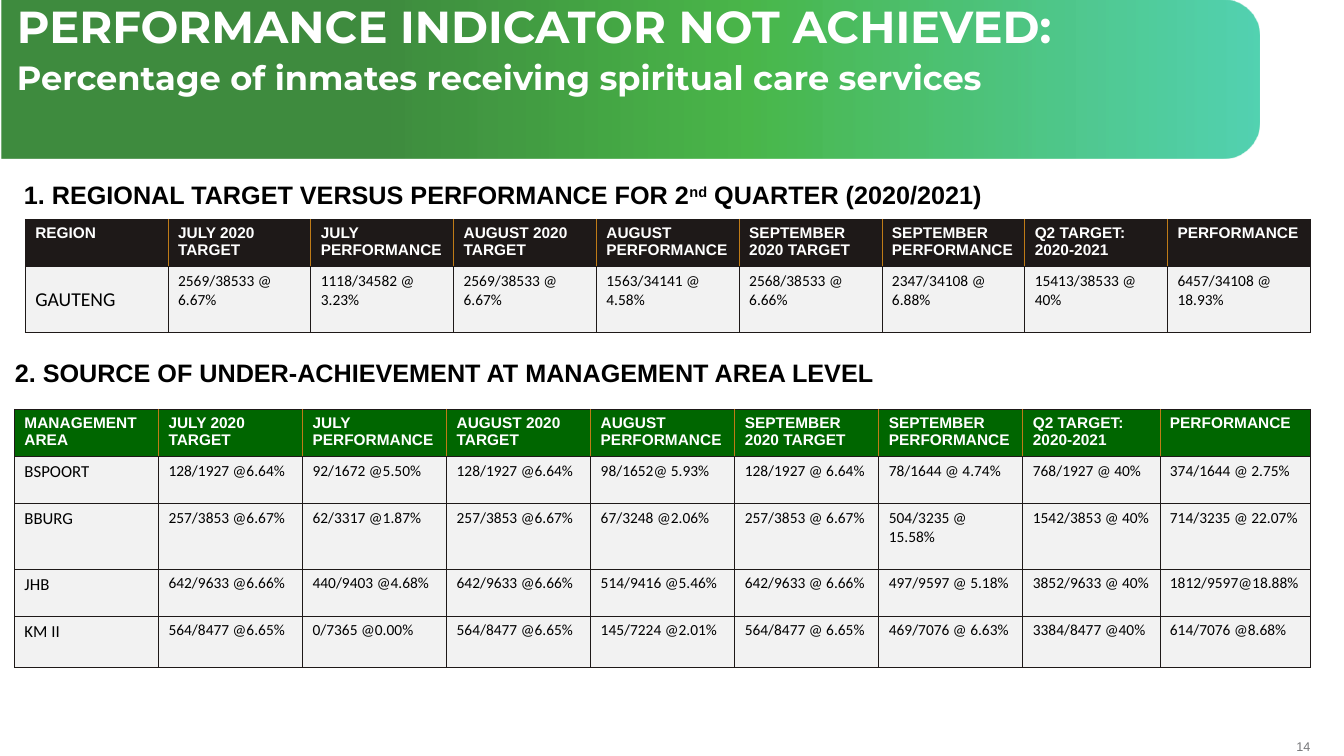
from pptx import Presentation
from pptx.dml.color import RGBColor
from pptx.enum.shapes import MSO_SHAPE
from pptx.enum.text import MSO_ANCHOR, PP_ALIGN
from pptx.oxml import parse_xml
from pptx.oxml.ns import nsdecls
from pptx.util import Pt

ROUND_TOP = MSO_SHAPE.ROUND_2_SAME_RECTANGLE
TOP, MIDDLE = MSO_ANCHOR.TOP, MSO_ANCHOR.MIDDLE
LEFT, RIGHT = PP_ALIGN.LEFT, PP_ALIGN.RIGHT

WHITE = RGBColor(0xFF, 0xFF, 0xFF)
BLACK = RGBColor(0x00, 0x00, 0x00)
GREY = RGBColor(0x77, 0x78, 0x7B)
INK = RGBColor(0x1E, 0x19, 0x18)
GREEN = RGBColor(0x00, 0x66, 0x00)
ORANGE = RGBColor(0xBF, 0x7B, 0x17)
PALE = RGBColor(0xF2, 0xF2, 0xF2)
BANNER_STOPS = [
    (30, GREEN, 75),
    (59, RGBColor(0x00, 0x99, 0x00), 71),
    (100, RGBColor(0x00, 0xBC, 0x8D), 67),
]

TITLE = "PERFORMANCE INDICATOR NOT ACHIEVED:"
SUBTITLE = "Percentage of inmates receiving spiritual care services"
REGIONAL_HEADING = [
    ("1. REGIONAL TARGET VERSUS PERFORMANCE FOR 2", False),
    ("nd", True),
    (" QUARTER (2020/2021)", False),
]
SOURCE_HEADING = [("2. SOURCE OF UNDER-ACHIEVEMENT AT MANAGEMENT AREA LEVEL", False)]
PAGE_NUMBER = "14"

PERIODS = [
    "JULY 2020\vTARGET", "JULY PERFORMANCE", "AUGUST 2020\vTARGET",
    "AUGUST PERFORMANCE", "SEPTEMBER 2020 TARGET", "SEPTEMBER PERFORMANCE",
    "Q2 TARGET: 2020-2021", "PERFORMANCE",
]
REGION_ROWS = [
    ["REGION"] + PERIODS,
    ["GAUTENG", "2569/38533 @ 6.67%", "1118/34582 @ 3.23%", "2569/38533 @\n6.67%",
     "1563/34141 @\n4.58%", "2568/38533 @\n6.66%", "2347/34108 @\n6.88%",
     "15413/38533 @\n40%", "6457/34108 @\n18.93%"],
]
AREA_ROWS = [
    ["MANAGEMENT AREA"] + PERIODS,
    ["BSPOORT", "128/1927 @6.64%", "92/1672 @5.50%", "128/1927 @6.64%", "98/1652@ 5.93%",
     "128/1927 @ 6.64%", "78/1644 @ 4.74%", "768/1927 @ 40%", "374/1644 @ 2.75%"],
    ["BBURG", "257/3853 @6.67%", "62/3317 @1.87%", "257/3853 @6.67%", "67/3248 @2.06%",
     "257/3853 @ 6.67%", "504/3235 @ 15.58%", "1542/3853 @ 40%", "714/3235 @ 22.07%"],
    ["JHB", "642/9633 @6.66%", "440/9403 @4.68%", "642/9633 @6.66%", "514/9416 @5.46%",
     "642/9633 @ 6.66%", "497/9597 @ 5.18%", "3852/9633 @ 40%", "1812/9597@18.88%"],
    ["KM II", "564/8477 @6.65%", "0/7365 @0.00%", "564/8477 @6.65%", "145/7224 @2.01%",
     "564/8477 @ 6.65%", "469/7076 @ 6.63%", "3384/8477 @40%", "614/7076 @8.68%"],
]

TABLES = [
    {"rows": REGION_ROWS, "at": (18, 156.6), "widths": [102] * 9, "heights": [33.5, 47.1],
     "header_fill": INK, "name_size": 14, "name_anchor": MIDDLE},
    {"rows": AREA_ROWS, "at": (10.3, 292.2), "widths": [102.9] * 7 + [97.9, 107.7],
     "heights": [33.6, 33.6, 47.1, 33.6, 36.5],
     "header_fill": GREEN, "name_size": 12, "name_anchor": TOP},
]


def font_format(name, size, color, bold=False):
    return {"name": name, "size": Pt(size), "bold": bold, "color": color}


def apply_font(font, values):
    for key, value in values.items():
        if key == "color":
            font.color.rgb = value
        else:
            setattr(font, key, value)


def add_text_frame(slide, box, **settings):
    text_frame = slide.shapes.add_textbox(*map(Pt, box)).text_frame
    text_frame.word_wrap = True
    for key, value in settings.items():
        setattr(text_frame, key, value)
    return text_frame


def add_banner(slide):
    length, height, left = 898.6, 113, 1.1
    banner = slide.shapes.add_shape(
        ROUND_TOP, Pt(left + (length - height) / 2), Pt((height - length) / 2),
        Pt(height), Pt(length))
    banner.rotation = 90
    banner.adjustments[0], banner.adjustments[1] = 0.233, 0
    banner.shadow.inherit = False
    banner.line.fill.background()
    stops = "".join(
        f'<a:gs pos="{position * 1000}"><a:srgbClr val="{color}">'
        f'<a:alpha val="{alpha * 1000}"/></a:srgbClr></a:gs>'
        for position, color, alpha in BANNER_STOPS)
    gradient = parse_xml(
        f'<a:gradFill {nsdecls("a")} rotWithShape="1"><a:gsLst>{stops}</a:gsLst>'
        '<a:lin ang="16200000" scaled="0"/></a:gradFill>')
    banner._element.spPr.find("{*}prstGeom").addnext(gradient)


def add_title(slide):
    text_frame = add_text_frame(slide, (5, 0, 862.6, 41))
    lines = [(TITLE, 32, 6), (SUBTITLE, 24, 0)]
    for index, (text, size, space_after) in enumerate(lines):
        paragraph = text_frame.add_paragraph() if index else text_frame.paragraphs[0]
        paragraph.text = text
        paragraph.line_spacing = 0.9
        paragraph.space_after = Pt(space_after)
        apply_font(paragraph.runs[0].font, font_format("Montserrat", size, WHITE, True))


def add_heading(slide, left, top, parts):
    paragraph = add_text_frame(slide, (left, top, 703, 29)).paragraphs[0]
    for text, raised in parts:
        run = paragraph.add_run()
        run.text = text
        apply_font(run.font, font_format("Arial", 18, BLACK, True))
        if raised:
            run.font._element.set("baseline", "30000")


def add_page_number(slide):
    margins = {f"margin_{side}": 0 for side in ("left", "top", "right", "bottom")}
    text_frame = add_text_frame(slide, (908, 527.8, 28, 10.8), vertical_anchor=MIDDLE, **margins)
    paragraph = text_frame.paragraphs[0]
    paragraph.text = PAGE_NUMBER
    paragraph.alignment = RIGHT
    apply_font(paragraph.runs[0].font, font_format("Arial", 9, GREY))


def set_borders(cell, colors):
    properties = cell._tc.get_or_add_tcPr()
    for side, color in colors.items():
        properties.append(parse_xml(
            f'<a:ln{side} {nsdecls("a")} w="6350"><a:solidFill><a:srgbClr val="{color}"/>'
            f'</a:solidFill></a:ln{side}>'))


def add_data_table(slide, data):
    rows, widths, heights = data["rows"], data["widths"], data["heights"]
    table = slide.shapes.add_table(
        len(rows), len(widths), *map(Pt, data["at"]), Pt(sum(widths)), Pt(sum(heights))).table
    table.horz_banding = False
    for column, width in zip(table.columns, widths):
        column.width = Pt(width)
    for row, height in zip(table.rows, heights):
        row.height = Pt(height)
    last = len(widths) - 1
    for row_index, texts in enumerate(rows):
        for column_index, text in enumerate(texts):
            cell = table.cell(row_index, column_index)
            is_header, is_name = row_index == 0, column_index == 0
            divider = ORANGE if is_header else INK
            set_borders(cell, {"L": INK if is_name else divider,
                               "R": INK if column_index == last else divider,
                               "T": INK, "B": INK})
            cell.fill.solid()
            cell.fill.fore_color.rgb = data["header_fill"] if is_header else PALE
            cell.vertical_anchor = data["name_anchor"] if is_name and not is_header else TOP
            cell.text_frame.text = text
            if is_header:
                values = font_format("Arial", 11, WHITE, True)
            else:
                values = font_format("Calibri", data["name_size"] if is_name else 11, BLACK)
            for paragraph in cell.text_frame.paragraphs:
                paragraph.alignment = LEFT
                for run in paragraph.runs:
                    apply_font(run.font, values)


def main():
    presentation = Presentation()
    presentation.slide_width, presentation.slide_height = Pt(960), Pt(540)
    slide = presentation.slides.add_slide(presentation.slide_layouts[6])
    add_page_number(slide)
    add_banner(slide)
    add_title(slide)
    add_heading(slide, 10, 124.6, REGIONAL_HEADING)
    add_heading(slide, 3.5, 252, SOURCE_HEADING)
    for data in TABLES:
        add_data_table(slide, data)
    presentation.save("out.pptx")


if __name__ == "__main__":
    main()
